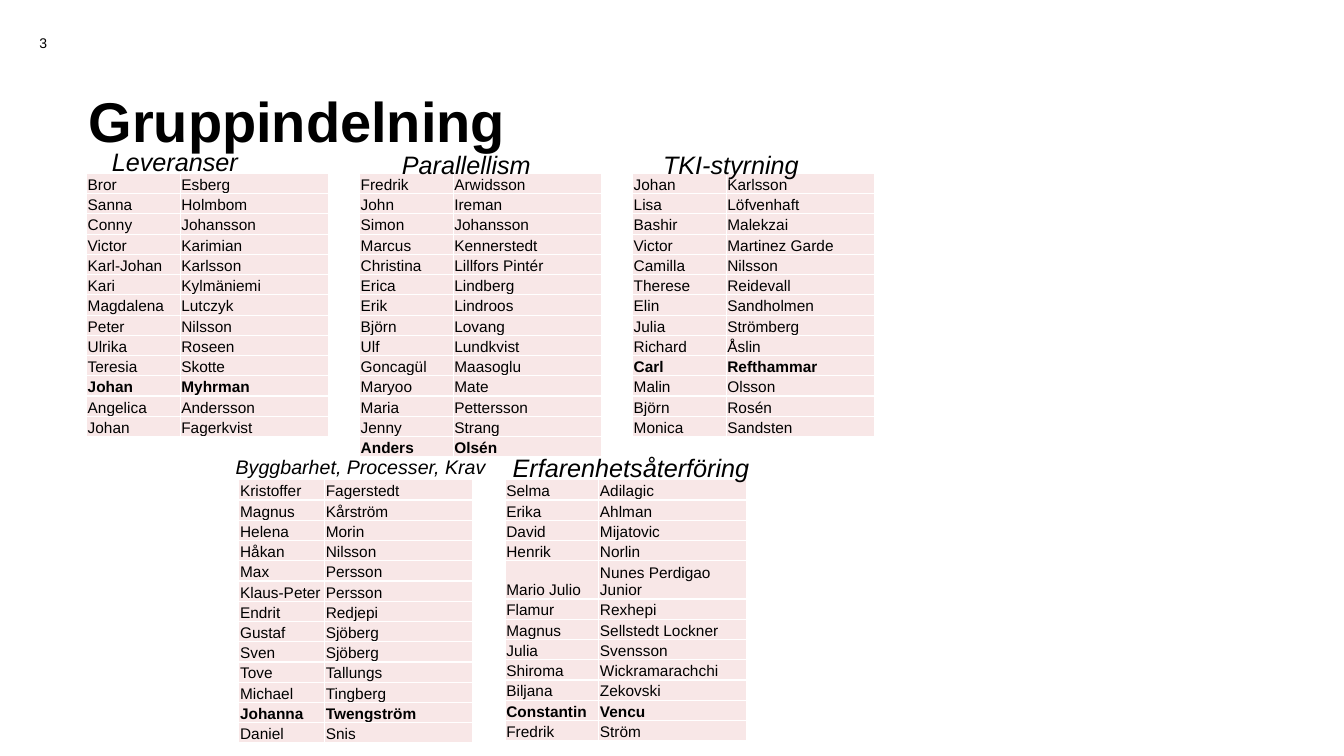
import pptx
import pptx.dml.color
import pptx.enum.text
import pptx.oxml
import pptx.oxml.ns
import pptx.util

Cm = pptx.util.Cm
Align = pptx.enum.text.PP_ALIGN
Anchor = pptx.enum.text.MSO_ANCHOR
AutoSize = pptx.enum.text.MSO_AUTO_SIZE

TOP_ROW, BOTTOM_ROW = 4.37, 12.09
GROUP_LEFT, GROUP_PITCH = 2.18, 6.88
FIRST_NAME_WIDTH, SURNAME_WIDTH = 2.36, 3.73

LEVERANSER = """Bror, Esberg; Sanna, Holmbom; Conny, Johansson; Victor, Karimian;
Karl-Johan, Karlsson; Kari, Kylmäniemi; Magdalena, Lutczyk; Peter, Nilsson;
Ulrika, Roseen; Teresia, Skotte; Johan, Myhrman; Angelica, Andersson; Johan, Fagerkvist"""
PARALLELLISM = """Fredrik, Arwidsson; John, Ireman; Simon, Johansson; Marcus, Kennerstedt;
Christina, Lillfors Pintér; Erica, Lindberg; Erik, Lindroos; Björn, Lovang;
Ulf, Lundkvist; Goncagül, Maasoglu; Maryoo, Mate; Maria, Pettersson; Jenny, Strang;
Anders, Olsén"""
TKI_STYRNING = """Johan, Karlsson; Lisa, Löfvenhaft; Bashir, Malekzai; Victor, Martinez Garde;
Camilla, Nilsson; Therese, Reidevall; Elin, Sandholmen; Julia, Strömberg;
Richard, Åslin; Carl, Refthammar; Malin, Olsson; Björn, Rosén; Monica, Sandsten"""
BYGGBARHET = """Kristoffer, Fagerstedt; Magnus, Kårström; Helena, Morin; Håkan, Nilsson;
Max, Persson; Klaus-Peter, Persson; Endrit, Redjepi; Gustaf, Sjöberg; Sven, Sjöberg;
Tove, Tallungs; Michael, Tingberg; Johanna, Twengström; Daniel, Snis"""
ERFARENHET = """Selma, Adilagic; Erika, Ahlman; David, Mijatovic; Henrik, Norlin;
Mario Julio, Nunes Perdigao Junior; Flamur, Rexhepi; Magnus, Sellstedt Lockner;
Julia, Svensson; Shiroma, Wickramarachchi; Biljana, Zekovski; Constantin, Vencu;
Fredrik, Ström"""

GROUPS = [
    (GROUP_LEFT, TOP_ROW, FIRST_NAME_WIDTH, "Myhrman", LEVERANSER),
    (GROUP_LEFT + GROUP_PITCH, TOP_ROW, FIRST_NAME_WIDTH, "Olsén", PARALLELLISM),
    (GROUP_LEFT + 2 * GROUP_PITCH, TOP_ROW, FIRST_NAME_WIDTH, "Refthammar", TKI_STYRNING),
    (6.02, BOTTOM_ROW, 2.16, "Twengström", BYGGBARHET),
    (12.73, BOTTOM_ROW, FIRST_NAME_WIDTH, "Vencu", ERFARENHET),
]
HEADINGS = [
    ("Leveranser", (2.57, 3.56, 3.71, 1.02), 18, 0),
    ("Parallellism", (9.88, 3.63, 3.78, 1.02), 18, 0),
    ("Erfarenhetsåterföring", (12.67, 11.28, 6.53, 1.02), 18, 0),
    ("TKI-styrning", (16.46, 3.63, 3.96, 1.02), 18, 0),
    ("Byggbarhet, Processer, Krav", (4.42, 11.35, 8.36, 0.86), 14, 1),
]


def colour(hex_value):
    """Turn a hex string into a colour."""
    return pptx.dml.color.RGBColor.from_string(hex_value)


def apply(target, values):
    """Set every attribute in a dict of format values."""
    for name, value in values.items():
        setattr(target, name, value)


class GroupSlide:
    """Hold the style and the current slide."""

    font_name, ink, paper, cell_tint = "Arial", "000000", "FFFFFF", "F8E7E7"
    row_height = 0.51
    cell_format = {
        "margin_left": Cm(0.03), "margin_right": Cm(0.03), "margin_top": Cm(0.03),
        "margin_bottom": 0, "vertical_anchor": Anchor.BOTTOM,
    }

    def __init__(self, deck):
        """Add a slide with a title only."""
        self.slide = deck.slides.add_slide(deck.slide_layouts[5])

    def add_text(self, frame, text, size, paragraph_format=None, **font_format):
        """Put one formatted paragraph in a frame."""
        paragraph = frame.paragraphs[0]
        run = paragraph.add_run()
        run.text = text
        apply(paragraph, paragraph_format or {})
        apply(run.font, {"name": self.font_name, "size": pptx.util.Pt(size), **font_format})
        run.font.color.rgb = colour(self.ink)

    def title(self, text, left, top, width, height):
        """Fill and place the title placeholder."""
        heading = self.slide.shapes.title
        apply(heading, {"left": Cm(left), "top": Cm(top), "width": Cm(width), "height": Cm(height)})
        apply(heading.text_frame, {"vertical_anchor": Anchor.MIDDLE, "auto_size": AutoSize.NONE})
        self.add_text(heading.text_frame, text, 40,
                      {"alignment": Align.LEFT, "line_spacing": 0.9}, bold=True)

    def label(self, text, box, size, frame_format, paragraph_format, **font_format):
        """Add a text box."""
        frame = self.slide.shapes.add_textbox(*map(Cm, box)).text_frame
        apply(frame, frame_format)
        self.add_text(frame, text, size, paragraph_format, **font_format)

    def borders(self, cell):
        """Draw thin lines on the four sides of a cell."""
        properties = cell._tc.get_or_add_tcPr()
        for position, side in enumerate(("lnL", "lnR", "lnT", "lnB")):
            properties.insert(position, pptx.oxml.parse_xml(
                f'<a:{side} {pptx.oxml.ns.nsdecls("a")} w="12700"><a:solidFill>'
                f'<a:srgbClr val="{self.paper}"/></a:solidFill></a:{side}>'))

    def members(self, left, top, first_name_width, leader, names):
        """Add a table of names with the leader in bold."""
        people = [[part.strip() for part in person.split(",")] for person in names.split(";")]
        widths = (first_name_width, SURNAME_WIDTH)
        table = self.slide.shapes.add_table(
            len(people), 2, Cm(left), Cm(top), Cm(sum(widths)),
            Cm(self.row_height * len(people))).table
        apply(table, {"first_row": False, "horz_banding": False})
        for column, width in zip(table.columns, widths):
            column.width = Cm(width)
        for row, person in zip(table.rows, people):
            row.height = Cm(self.row_height)
            for cell, name in zip(row.cells, person):
                apply(cell, self.cell_format)
                cell.fill.solid()
                cell.fill.fore_color.rgb = colour(self.cell_tint)
                self.borders(cell)
                self.add_text(cell.text_frame, name, 11, bold=person[1] == leader)


def main():
    """Build the slide and save it."""
    deck = pptx.Presentation()
    apply(deck, {"slide_width": Cm(33.87), "slide_height": Cm(19.05)})
    page = GroupSlide(deck)
    page.title("Gruppindelning", 1.98, 1.88, 30, 2.49)
    page.label("3", (0, 0.56, 2.18, 1.02), 10,
               {"word_wrap": True, "vertical_anchor": Anchor.MIDDLE},
               {"alignment": Align.CENTER})
    for group in GROUPS:
        page.members(*group)
    for text, box, size, level in HEADINGS:
        page.label(text, box, size,
                   {"word_wrap": False, "auto_size": AutoSize.SHAPE_TO_FIT_TEXT},
                   {"level": level}, italic=True)
    deck.save("out.pptx")


if __name__ == "__main__":
    main()
